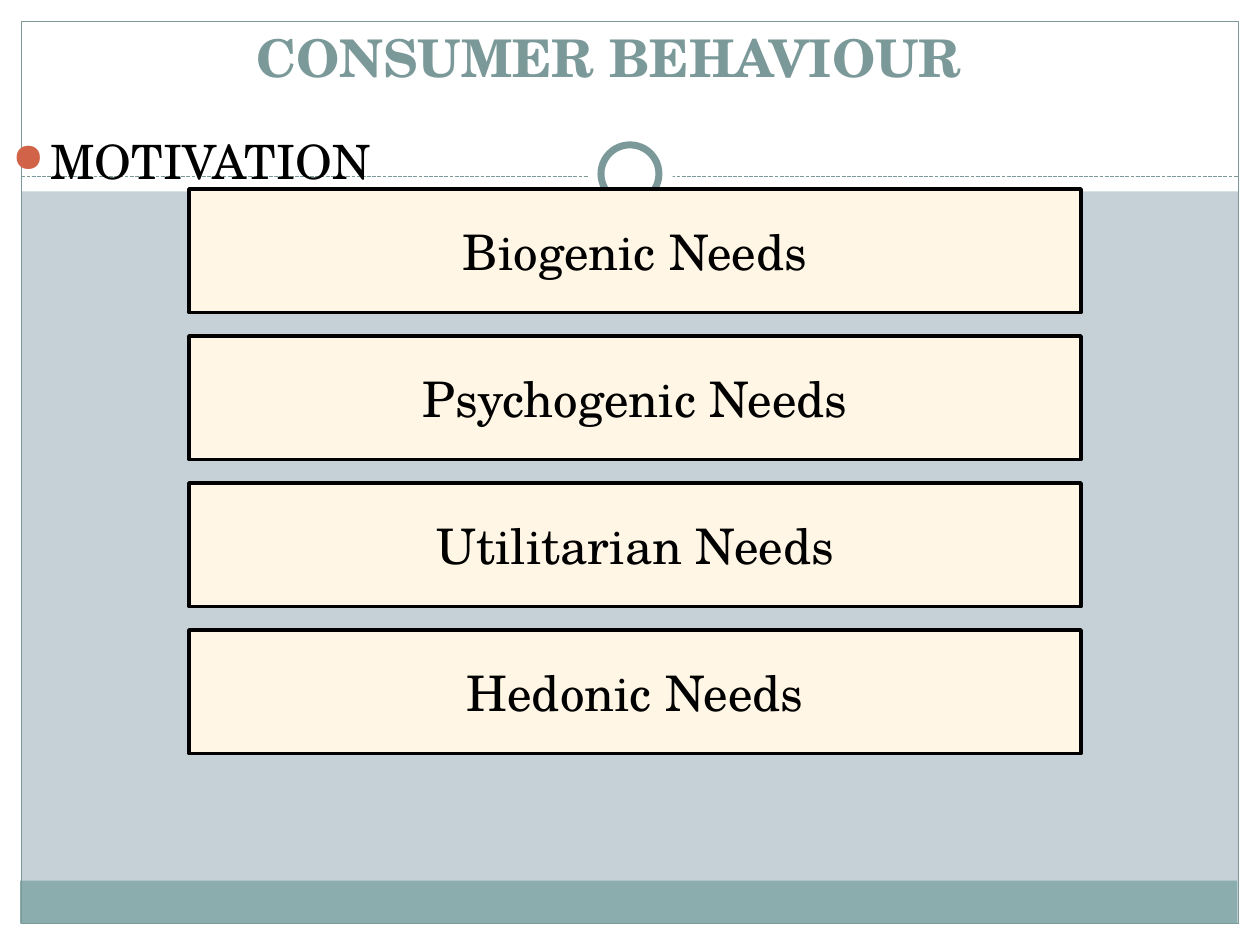
from lxml import etree
from pptx import Presentation, util as u
from pptx.dml.color import RGBColor
from pptx.enum import dml, shapes, text
from pptx.oxml.ns import qn

TITLE = "CONSUMER BEHAVIOUR"
TOPIC = "MOTIVATION"
NEEDS = ["Biogenic Needs", "Psychogenic Needs", "Utilitarian Needs", "Hedonic Needs"]
FONT = "TeX Gyre Schola"
HUE = {"back": "C5D1D7", "white": "FFFFFF", "band": "8CADAE", "trim": "7C999A",
       "dot": "D16349", "card": "FFF6E5", "ink": "000000"}
RECT, OVAL = shapes.MSO_SHAPE.RECTANGLE, shapes.MSO_SHAPE.OVAL
FRAME = [
    (RECT, (0, 7.33, 10, 0.17), "white", None, 0),
    (RECT, (0, 0, 10, 1.52), "white", None, 0),
    (RECT, (0, 0, 0.17, 7.5), "white", None, 0),
    (RECT, (9.83, 0, 0.17, 7.5), "white", None, 0),
    (RECT, (0.16, 6.99, 9.66, 0.34), "band", None, 0),
    (RECT, (0.17, 0.17, 9.66, 7.16), None, "trim", 0.75),
]
RING = [
    (OVAL, (4.67, 1.05, 0.67, 0.67), "white", None, 0),
    (OVAL, (4.77, 1.15, 0.46, 0.46), "white", "trim", 4),
]
TOP, STEP = 1.5, 3.5 / 3


def rgb(name):
    return RGBColor.from_string(HUE[name])


def inches(box):
    return [u.Inches(n) for n in box]


def draw(slide, kind, box, fill, line, width):
    shape = slide.shapes.add_shape(kind, *inches(box))
    shape.shadow.inherit = False
    if fill:
        shape.fill.solid()
        shape.fill.fore_color.rgb = rgb(fill)
    else:
        shape.fill.background()
    if line:
        shape.line.color.rgb = rgb(line)
        shape.line.width = u.Pt(width)
    else:
        shape.line.fill.background()
    return shape


def rule(slide):
    line = slide.shapes.add_connector(shapes.MSO_CONNECTOR.STRAIGHT,
                                      *inches((0.17, 1.4, 9.83, 1.4)))
    line.line.color.rgb = rgb("trim")
    line.line.width = u.Pt(0.75)
    line.line.dash_style = dml.MSO_LINE.SQUARE_DOT
    etree.SubElement(line._element.spPr, qn("a:effectLst"))


def write(shape, words, size, hue, align, bold=False):
    frame = shape.text_frame
    frame.word_wrap = True
    para = frame.paragraphs[0]
    para.alignment = align
    run = para.add_run()
    run.text = words
    run.font.name = FONT
    run.font.size = u.Pt(size)
    run.font.bold = bold
    run.font.color.rgb = rgb(hue)
    return para


def bullet(para):
    props = para._p.get_or_add_pPr()
    props.set("marL", str(u.Inches(0.3)))
    props.set("indent", str(-u.Inches(0.3)))
    color = etree.SubElement(props, qn("a:buClr"))
    etree.SubElement(color, qn("a:srgbClr"), val=HUE["dot"])
    etree.SubElement(props, qn("a:buSzPct"), val="85000")
    etree.SubElement(props, qn("a:buChar"), char="●")


def main():
    deck = Presentation()
    deck.slide_width, deck.slide_height = inches((10, 7.5))
    slide = deck.slides.add_slide(deck.slide_layouts[6])
    slide.background.fill.solid()
    slide.background.fill.fore_color.rgb = rgb("back")

    for part in FRAME:
        draw(slide, *part)
    rule(slide)
    for part in RING:
        draw(slide, *part)

    center, left = text.PP_ALIGN.CENTER, text.PP_ALIGN.LEFT
    title = slide.shapes.add_textbox(*inches((0.17, 0.25, 9.33, 0.5)))
    title.text_frame.vertical_anchor = text.MSO_ANCHOR.BOTTOM
    write(title, TITLE, 29.7, "trim", center, True)

    body = slide.shapes.add_textbox(*inches((0, 1, 10, 6.5)))
    para = write(body, TOPIC, 27, "ink", left)
    para.space_before = u.Pt(5.4)
    bullet(para)

    for row, need in enumerate(NEEDS):
        card = draw(slide, RECT, (1.5, TOP + row * STEP, 7.08, 0.98), "card", "ink", 2)
        frame = card.text_frame
        frame.margin_top = frame.margin_bottom = u.Inches(0.25)
        frame.auto_size = text.MSO_AUTO_SIZE.SHAPE_TO_FIT_TEXT
        write(card, need, 28, "ink", center)

    deck.save("out.pptx")


if __name__ == "__main__":
    main()
